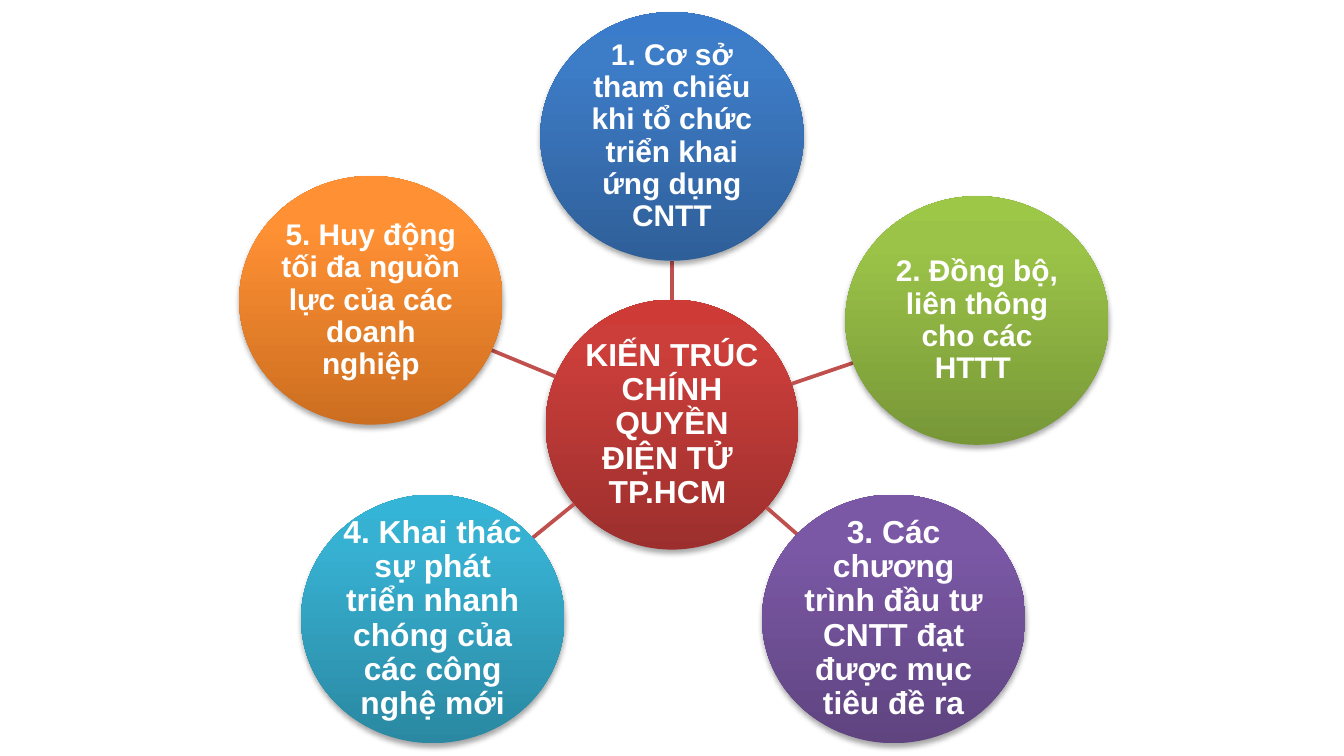
from copy import deepcopy
from math import hypot

from lxml.etree import SubElement
from pptx import Presentation
from pptx.dml.color import RGBColor
from pptx.enum.shapes import MSO_CONNECTOR as CONN, MSO_SHAPE as SHAPE
from pptx.enum.text import MSO_ANCHOR as ANCHOR, PP_ALIGN as ALIGN
from pptx.oxml.ns import qn
from pptx.util import Inches, Pt

# Content: left, top, font size, gradient name, paragraphs
HUB = (4.06, 2.23, 17, "red", ["KIẾN TRÚC CHÍNH QUYỀN ĐIỆN TỬ \nTP.HCM "])
NODES = [
    (4.02, 0.09, 16, "blue",
     ["1. Cơ sở", "tham chiếu khi tổ chức triển khai ứng dụng CNTT"]),
    (6.29, 1.46, 16, "green", ["2. Đồng bộ, liên thông cho các HTTT "]),
    (5.67, 3.68, 17, "purple",
     ["3. Các", "chương trình đầu tư CNTT đạt được mục tiêu đề ra"]),
    (2.24, 3.68, 17, "teal",
     ["4. Khai thác", "sự phát triển nhanh chóng của các công nghệ mới"]),
    (1.78, 1.31, 16, "orange",
     ["5. Huy động", "tối đa nguồn lực của các doanh nghiệp"]),
]
HUB_SIZE = (1.88, 1.86)
NODE_SIZE = (1.96, 1.85)
STOPS = (0, 0.8, 1)
GRADIENTS = {
    "red": ("9C2F2D", "CB3E3A", "CE3B37"),
    "blue": ("2F5F99", "3D7CC7", "3A7CCB"),
    "green": ("779737", "9BC348", "9DC746"),
    "purple": ("5F4480", "7B58A6", "7C57A8"),
    "teal": ("2A88A2", "37B1D2", "34B4D6"),
    "orange": ("CC6E20", "FF9034", "FF9136"),
}
COLORS = {"text": "FFFFFF", "line": "C0504D", "shadow": "000000"}


def rgb(name):
    return RGBColor.from_string(COLORS[name])


def fill_gradient(sp, name):
    sp.fill.gradient()
    sp.fill.gradient_angle = 90
    stop_list = sp._element.spPr.find(qn("a:gradFill")).find(qn("a:gsLst"))
    stop_list.append(deepcopy(stop_list[0]))
    for stop, position, color in zip(sp.fill.gradient_stops, STOPS, GRADIENTS[name]):
        stop.position = position
        stop.color.rgb = RGBColor.from_string(color)


def add_shadow(sp):
    sp.shadow.inherit = False
    effects = sp._element.spPr.find(qn("a:effectLst"))
    outer = SubElement(effects, qn("a:outerShdw"), blurRad=str(Pt(3.1)),
                       dist=str(Pt(1.8)), dir="5400000", rotWithShape="0")
    color = SubElement(outer, qn("a:srgbClr"), val=COLORS["shadow"])
    SubElement(color, qn("a:alpha"), val="35000")


def add_circle(slide, item, size):
    left, top, font_size, gradient, paragraphs = item
    sp = slide.shapes.add_shape(SHAPE.OVAL, *map(Inches, (left, top, *size)))
    fill_gradient(sp, gradient)
    sp.line.fill.background()
    add_shadow(sp)
    tf = sp.text_frame
    tf.word_wrap = True
    tf.vertical_anchor = ANCHOR.MIDDLE
    tf.margin_left = tf.margin_right = tf.margin_top = tf.margin_bottom = Inches(0.01)
    for i, text in enumerate(paragraphs):
        p = tf.add_paragraph() if i else tf.paragraphs[0]
        p.alignment = ALIGN.CENTER
        p.line_spacing = 0.9
        for j, part in enumerate(text.split("\n")):
            if j:
                p.add_line_break()
            r = p.add_run()
            r.text = part
            r.font.name = "Arial"
            r.font.size = Pt(font_size)
            r.font.bold = True
            r.font.color.rgb = rgb("text")


def center(item, size):
    return item[0] + size[0] / 2, item[1] + size[1] / 2


def edge_point(start, size, target):
    """Point where the ray from an ellipse's centre to target leaves the ellipse."""
    dx, dy = target[0] - start[0], target[1] - start[1]
    t = 1 / hypot(dx / (size[0] / 2), dy / (size[1] / 2))
    return start[0] + t * dx, start[1] + t * dy


def add_spoke(slide, node):
    hub_center, node_center = center(HUB, HUB_SIZE), center(node, NODE_SIZE)
    begin = edge_point(hub_center, HUB_SIZE, node_center)
    end = edge_point(node_center, NODE_SIZE, hub_center)
    spoke = slide.shapes.add_connector(CONN.STRAIGHT, *map(Inches, begin + end))
    spoke.line.color.rgb = rgb("line")
    spoke.line.width = Pt(2)
    SubElement(spoke._element.spPr, qn("a:effectLst"))


def main():
    prs = Presentation()
    prs.slide_width = Inches(10)
    prs.slide_height = Inches(10 * 9 / 16)
    slide = prs.slides.add_slide(prs.slide_layouts[6])

    # Hub, then each spoke with its node
    add_circle(slide, HUB, HUB_SIZE)
    for node in NODES:
        add_spoke(slide, node)
        add_circle(slide, node, NODE_SIZE)
    prs.save("out.pptx")


if __name__ == "__main__":
    main()
